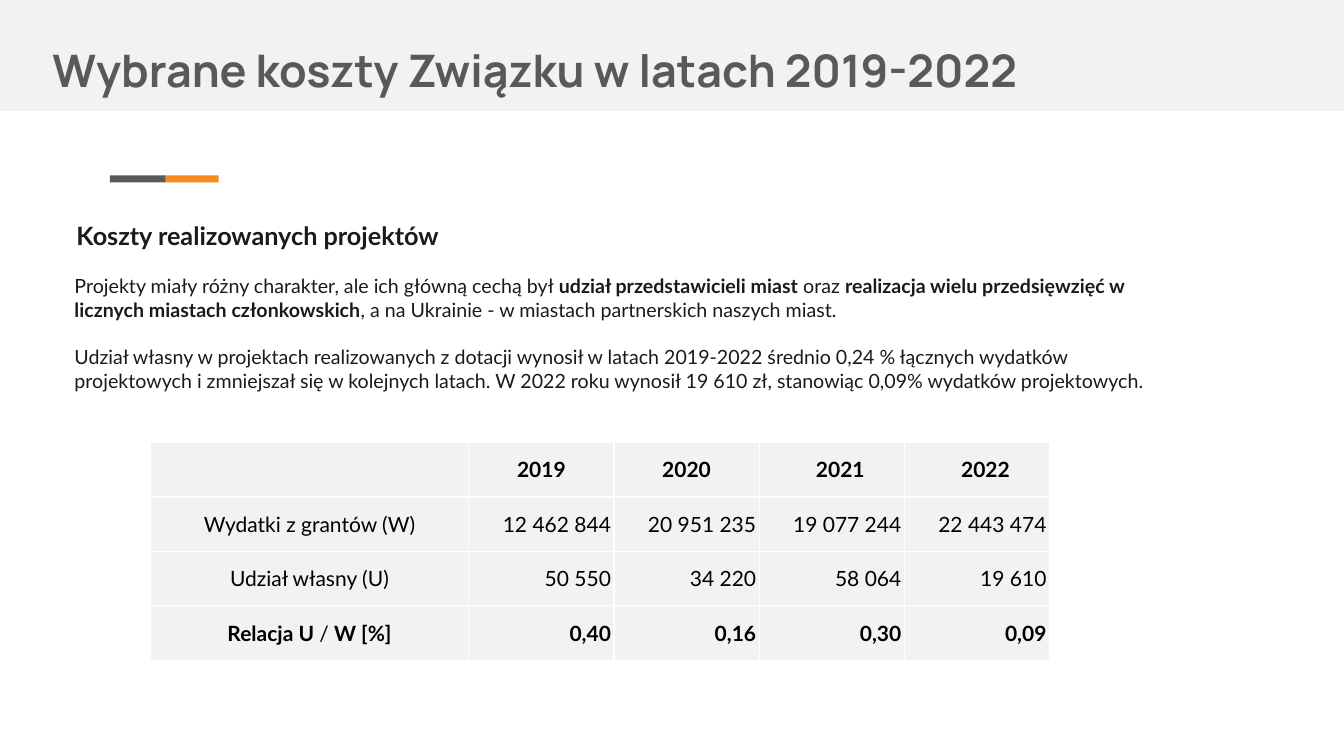
from lxml.etree import SubElement
from pptx import Presentation
from pptx.dml.color import RGBColor
from pptx.enum.shapes import MSO_SHAPE
from pptx.enum.text import MSO_ANCHOR, MSO_AUTO_SIZE, PP_ALIGN
from pptx.oxml.ns import qn
from pptx.util import Inches, Pt

COLORS = {
    "panel": "F2F2F2",
    "orange": "F68B1F",
    "gray": "58595B",
    "body": "1A1A1A",
    "black": "000000",
    "white": "FFFFFF",
}
BODY_FONT = "Lato"
TITLE_FONT = "Manrope"

TITLE = "Wybrane koszty Związku w latach 2019-2022"
HEADING = [[("Koszty realizowanych projektów", True)]]
DESCRIPTION = [
    [
        ("Projekty miały różny charakter, ale ich główną cechą był ", False),
        ("udział przedstawicieli miast", True),
        (" oraz ", False),
        ("realizacja wielu przedsięwzięć w licznych miastach członkowskich", True),
        (", a na Ukrainie - w miastach partnerskich naszych miast.", False),
    ],
    [
        (
            "Udział własny w projektach realizowanych z dotacji wynosił w latach "
            "2019-2022 średnio 0,24 % łącznych wydatków projektowych i zmniejszał się "
            "w kolejnych latach. W 2022 roku wynosił 19 610 zł, stanowiąc 0,09% "
            "wydatków projektowych.",
            False,
        )
    ],
]
YEARS = ["", "2019", "2020", "2021", "2022"]
COSTS = [
    ["Wydatki z grantów (W)", "12 462 844", "20 951 235", "19 077 244", "22 443 474"],
    ["Udział własny (U)", "50 550", "34 220", "58 064", "19 610"],
]
RATIO_LABEL = [("Relacja U ", True), ("/ ", False), ("W [%]", True)]
RATIOS = ["0,40", "0,16", "0,30", "0,09"]


def rgb(name):
    return RGBColor.from_string(COLORS[name])


def format_font(font, name, size, color, bold):
    font.name = name
    font.size = Pt(size)
    font.color.rgb = rgb(color)
    font.bold = bold


def add_runs(paragraph, pieces, size, color):
    for text, bold in pieces:
        run = paragraph.add_run()
        run.text = text
        format_font(run.font, BODY_FONT, size, color, bold)


def add_bar(slide, left, top, width, height, color):
    bar = slide.shapes.add_shape(
        MSO_SHAPE.RECTANGLE, Inches(left), Inches(top), Inches(width), Inches(height)
    )
    bar.shadow.inherit = False
    bar.fill.solid()
    bar.fill.fore_color.rgb = rgb(color)
    bar.line.fill.background()


def add_text(slide, left, top, width, height, paragraphs, size, gap=0):
    box = slide.shapes.add_textbox(
        Inches(left), Inches(top), Inches(width), Inches(height)
    )
    frame = box.text_frame
    frame.word_wrap = True
    for index, pieces in enumerate(paragraphs):
        paragraph = frame.add_paragraph() if index else frame.paragraphs[0]
        if index:
            paragraph.space_before = Pt(gap)
        add_runs(paragraph, pieces, size, "body")


def format_title(slide):
    title = slide.shapes.title
    title.left, title.top = Inches(0.42), Inches(0)
    title.width, title.height = Inches(11.21), Inches(1.11)
    frame = title.text_frame
    frame.text = TITLE
    frame.auto_size = MSO_AUTO_SIZE.NONE
    frame.vertical_anchor = MSO_ANCHOR.MIDDLE
    frame.margin_left = frame.margin_right = Inches(0.1)
    frame.margin_top = frame.margin_bottom = Inches(0.1)
    paragraph = frame.paragraphs[0]
    paragraph.alignment = PP_ALIGN.LEFT
    paragraph.line_spacing = 1.5
    format_font(paragraph.runs[0].font, TITLE_FONT, 32, "gray", True)
    slide.shapes.element.append(title.element)


def add_borders(cell):
    properties = cell._tc.get_or_add_tcPr()
    for side in ("a:lnL", "a:lnR", "a:lnT", "a:lnB"):
        line = SubElement(properties, qn(side), w=str(Pt(1)))
        fill = SubElement(line, qn("a:solidFill"))
        SubElement(fill, qn("a:srgbClr"), val=COLORS["white"])


def fill_cell(cell, pieces, alignment, margin, indent):
    add_borders(cell)
    cell.fill.solid()
    cell.fill.fore_color.rgb = rgb("panel")
    cell.vertical_anchor = MSO_ANCHOR.MIDDLE
    cell.margin_left = cell.margin_right = Inches(margin)
    cell.margin_top = cell.margin_bottom = Inches(0)
    paragraph = cell.text_frame.paragraphs[0]
    paragraph.alignment = alignment
    if indent:
        paragraph._p.get_or_add_pPr().set("marL", str(Inches(indent)))
    if pieces[0][0]:
        add_runs(paragraph, pieces, 15, "black")


def add_cost_table(slide):
    rows = [[[(year, True)] for year in YEARS]]
    rows += [[[(text, False)] for text in row] for row in COSTS]
    rows.append([RATIO_LABEL] + [[(ratio, True)] for ratio in RATIOS])
    frame = slide.shapes.add_table(
        len(rows), len(YEARS), Inches(1.49), Inches(4.39), Inches(8.92), Inches(2.16)
    )
    table = frame.table
    table.first_row = table.horz_banding = False
    for index, column in enumerate(table.columns):
        column.width = Inches(1.44 if index else 3.16)
    for row_index, row in enumerate(rows):
        table.rows[row_index].height = Inches(0.54)
        for column_index, pieces in enumerate(row):
            is_value = row_index and column_index
            fill_cell(
                table.cell(row_index, column_index),
                pieces,
                PP_ALIGN.RIGHT if is_value else PP_ALIGN.CENTER,
                0.03 if column_index else 0.04,
                0.17 if row_index == 0 and column_index > 2 else 0,
            )


def main():
    """Build the slide on project costs and save it."""
    presentation = Presentation()
    presentation.slide_width = Inches(13.33)
    presentation.slide_height = Inches(7.5)
    slide = presentation.slides.add_slide(presentation.slide_layouts[5])
    add_bar(slide, 0, 0, 13.33, 1.1, "panel")
    add_bar(slide, 1.63, 1.74, 0.54, 0.07, "orange")
    add_bar(slide, 1.09, 1.74, 0.55, 0.07, "gray")
    add_text(slide, 0.66, 2.14, 10.05, 0.4, HEADING, 18)
    add_text(slide, 0.64, 2.67, 11.21, 1.28, DESCRIPTION, 14, gap=17)
    add_cost_table(slide)
    format_title(slide)
    presentation.save("out.pptx")


if __name__ == "__main__":
    main()
